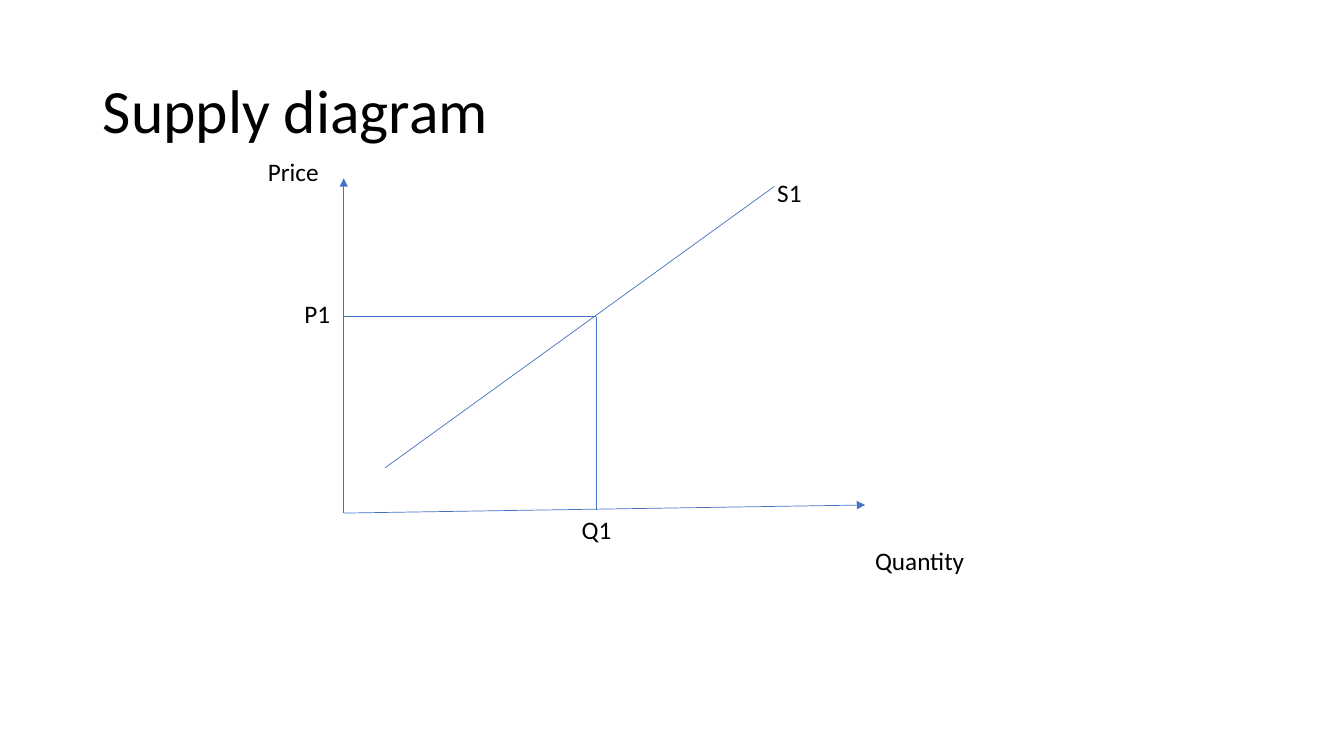
from pptx import Presentation
from pptx.dml.color import RGBColor
from pptx.enum.shapes import MSO_CONNECTOR
from pptx.enum.text import MSO_ANCHOR, PP_ALIGN
from pptx.oxml.ns import qn
from pptx.util import Inches, Pt
from lxml.etree import SubElement

BLACK = RGBColor(0x00, 0x00, 0x00)
BLUE = RGBColor(0x44, 0x72, 0xC4)

deck = Presentation()
deck.slide_width, deck.slide_height = Inches(13.33), Inches(7.5)
page = deck.slides.add_slide(deck.slide_layouts[5])


def to_slide(*shares):
    """Turn alternating percentages of the slide's width and height into lengths."""
    sides = (deck.slide_width, deck.slide_height)
    return [round(sides[i % 2] * share / 100) for i, share in enumerate(shares)]


def write(box, text, size):
    box.text_frame.word_wrap = True
    para = box.text_frame.paragraphs[0]
    para.alignment = PP_ALIGN.LEFT
    span = para.add_run()
    span.text = text
    font_format = {"name": "Calibri", "size": Pt(size)}
    for name, value in font_format.items():
        setattr(span.font, name, value)
    span.font.color.rgb = BLACK
    return para


title = page.shapes.title
title.left, title.top, title.width, title.height = to_slide(6.9, 5.33, 86.27, 19.33)
title.text_frame.vertical_anchor = MSO_ANCHOR.MIDDLE
write(title, "Supply diagram", 44).line_spacing = 0.9

# Shares of the slide's width and height, in percent
origin = (25.58, 67.87)
price_level, quantity_level = 41.87, 44.34
market_point = (quantity_level, price_level)

lines = [  # start, end, arrowhead at the end
    (origin, (origin[0], 23.6), True),
    (origin, (64.37, 66.8), True),
    ((28.66, 61.87), (57.61, 24.67), False),
    (market_point, (quantity_level, 67.47), False),
    (market_point, (origin[0], price_level), False),
]
for start, end, has_arrow in lines:
    line = page.shapes.add_connector(MSO_CONNECTOR.STRAIGHT, *to_slide(*start, *end))
    line.line.color.rgb = BLUE
    line.line.width = Pt(0.5)
    if has_arrow:
        SubElement(line.line._get_or_add_ln(), qn("a:tailEnd"), type="triangle")
    SubElement(line._element.spPr, qn("a:effectLst"))

label_height = 5.33
labels = [  # text, left, top, width
    ("Quantity", 64.37, 71.47, 20.78),
    ("Price", 19.2, 20, 11.4),
    ("S1", 57.09, 22.8, 4.8),
    ("Q1", 42.54, 67.33, 4.73),
    ("P1", 21.91, 38.8, 3.83),
]
for text, left, top, width in labels:
    box = page.shapes.add_textbox(*to_slide(left, top, width, label_height))
    write(box, text, 18)

deck.save("out.pptx")
